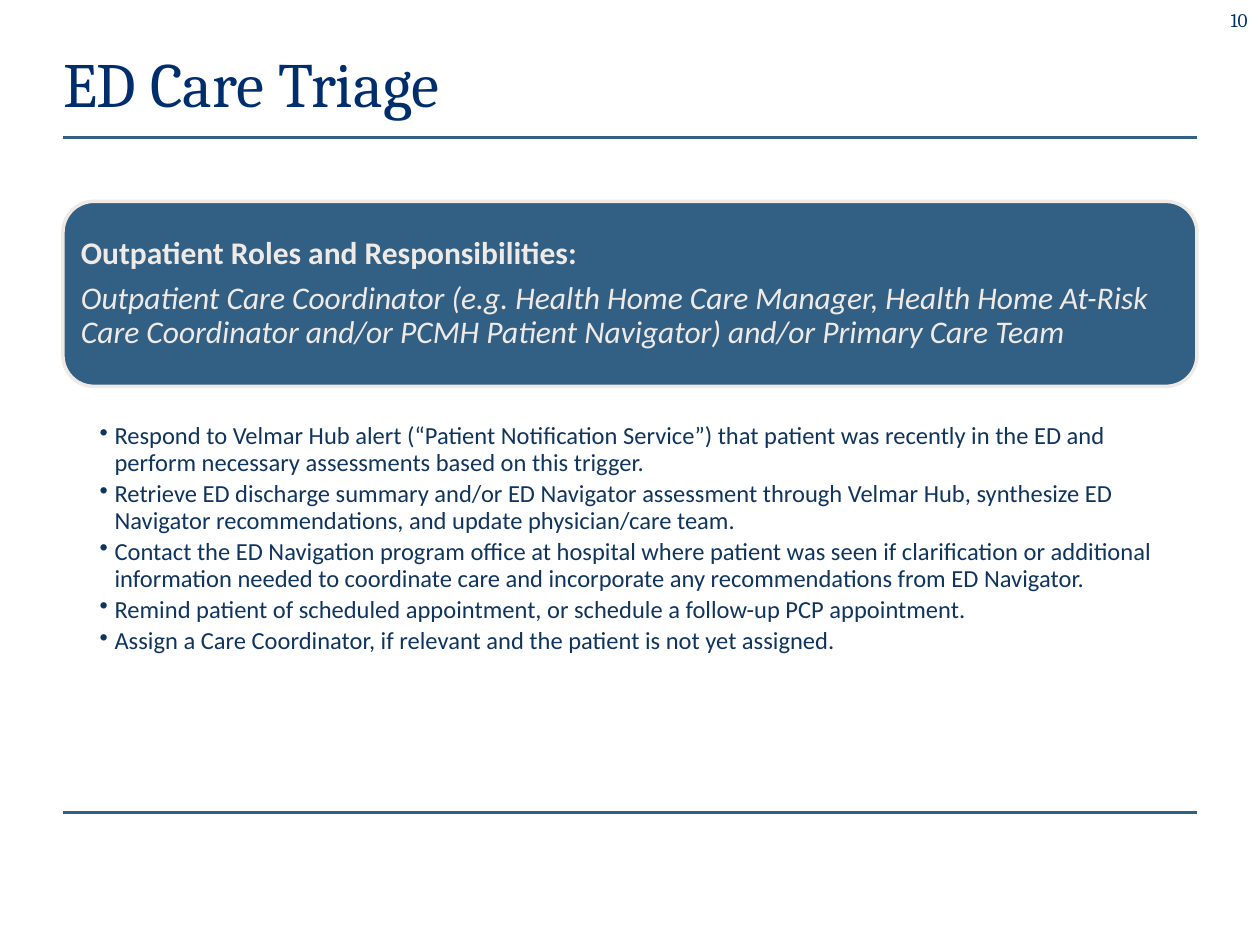
from dataclasses import dataclass

from lxml import etree
from pptx import Presentation
from pptx import util as u
from pptx.dml.color import RGBColor
from pptx.enum import shapes, text
from pptx.oxml.ns import qn


@dataclass(frozen=True)
class Theme:
    heading: str = "Cambria"
    body: str = "Calibri"
    navy: str = "002E6D"
    ink: str = "0F345E"
    steel: str = "326084"
    cream: str = "F0EAE6"
    title_size: int = 36
    panel_size: int = 18
    list_size: int = 14
    number_size: int = 11


theme = Theme()
LEFT, WIDTH = 1.27, 22.86


def write(tf, lines, *, font, size, color, styles=(), bullet=False, spacing=None,
          after=0, align=text.PP_ALIGN.LEFT, anchor=text.MSO_ANCHOR.TOP,
          insets=(0.25, 0.13, 0.25, 0.13)):
    """Fill a text frame, one paragraph per line; styles holds (bold, italic) pairs."""
    tf.word_wrap = True
    tf.auto_size = text.MSO_AUTO_SIZE.NONE
    tf.vertical_anchor = anchor
    tf.margin_left, tf.margin_top, tf.margin_right, tf.margin_bottom = map(u.Cm, insets)
    for i, line in enumerate(lines):
        p = tf.paragraphs[0] if i == 0 else tf.add_paragraph()
        if bullet:
            pPr = p._p.get_or_add_pPr()
            pPr.set("marL", str(u.Cm(0.3)))
            pPr.set("indent", str(-u.Cm(0.3)))
            etree.SubElement(pPr, qn("a:buChar")).set("char", "•")
        p.alignment = align
        p.space_after = u.Pt(after)
        if spacing:
            p.line_spacing = spacing
        r = p.add_run()
        r.text = line
        r.font.name, r.font.size = font, u.Pt(size)
        r.font.color.rgb = RGBColor.from_string(color)
        r.font.bold, r.font.italic = styles[i] if styles else (False, False)


prs = Presentation()
prs.slide_width, prs.slide_height = u.Cm(25.4), u.Cm(19.05)
s = prs.slides.add_slide(prs.slide_layouts[5])

# Rules under the title and above the footer
for y in (2.77, 16.38):
    rule = s.shapes.add_connector(shapes.MSO_CONNECTOR.STRAIGHT, u.Cm(LEFT), u.Cm(y),
                                  u.Cm(LEFT + WIDTH), u.Cm(y))
    rule.line.color.rgb = RGBColor.from_string(theme.steel)
    rule.line.width = u.Pt(1.25)
    etree.SubElement(rule._element.spPr, qn("a:effectLst"))

# Title
title = s.shapes.title
title.left, title.top, title.width, title.height = map(u.Cm, (LEFT, 0.76, WIDTH, 1.8))
write(title.text_frame, ["ED Care Triage"], font=theme.heading, size=theme.title_size,
      color=theme.navy, anchor=text.MSO_ANCHOR.MIDDLE, insets=(0, 0.13, 0, 0.13))

# Roles panel
panel = s.shapes.add_shape(shapes.MSO_SHAPE.ROUNDED_RECTANGLE, u.Cm(LEFT), u.Cm(4.06),
                           u.Cm(WIDTH), u.Cm(3.73))
panel.shadow.inherit = False
panel.fill.solid()
panel.fill.fore_color.rgb = RGBColor.from_string(theme.steel)
panel.line.color.rgb = RGBColor.from_string(theme.cream)
panel.line.width = u.Pt(2)
write(panel.text_frame, [
    "Outpatient Roles and Responsibilities:",
    "Outpatient Care Coordinator (e.g. Health Home Care Manager, Health Home At-Risk "
    "Care Coordinator and/or PCMH Patient Navigator) and/or Primary Care Team",
], font=theme.body, size=theme.panel_size, color=theme.cream,
    styles=[(True, False), (False, True)], spacing=0.9, after=6.3,
    anchor=text.MSO_ANCHOR.MIDDLE, insets=(0.18, 0.18, 0.18, 0.18))

# Responsibilities
duties = s.shapes.add_textbox(u.Cm(LEFT), u.Cm(8.46), u.Cm(WIDTH), u.Cm(6.96))
write(duties.text_frame, [
    "Respond to Velmar Hub alert (“Patient Notification Service”) that patient was "
    "recently in the ED and perform necessary assessments based on this trigger.",
    "Retrieve ED discharge summary and/or ED Navigator assessment through Velmar Hub, "
    "synthesize ED Navigator recommendations, and update physician/care team.",
    "Contact the ED Navigation program office at hospital where patient was seen if "
    "clarification or additional information needed to coordinate care and incorporate "
    "any recommendations from ED Navigator.",
    "Remind patient of scheduled appointment, or schedule a follow-up PCP appointment.",
    "Assign a Care Coordinator, if relevant and the patient is not yet assigned.",
], font=theme.body, size=theme.list_size, color=theme.ink, bullet=True, spacing=0.9,
    after=2.8, insets=(0.74, 0.08, 0.36, 0.08))

# Page number
number = s.shapes.add_textbox(u.Cm(24.38), u.Cm(0), u.Cm(1.02), u.Cm(0.79))
write(number.text_frame, ["10"], font=theme.heading, size=theme.number_size,
      color=theme.navy, align=text.PP_ALIGN.RIGHT, anchor=text.MSO_ANCHOR.MIDDLE)

prs.save("out.pptx")
